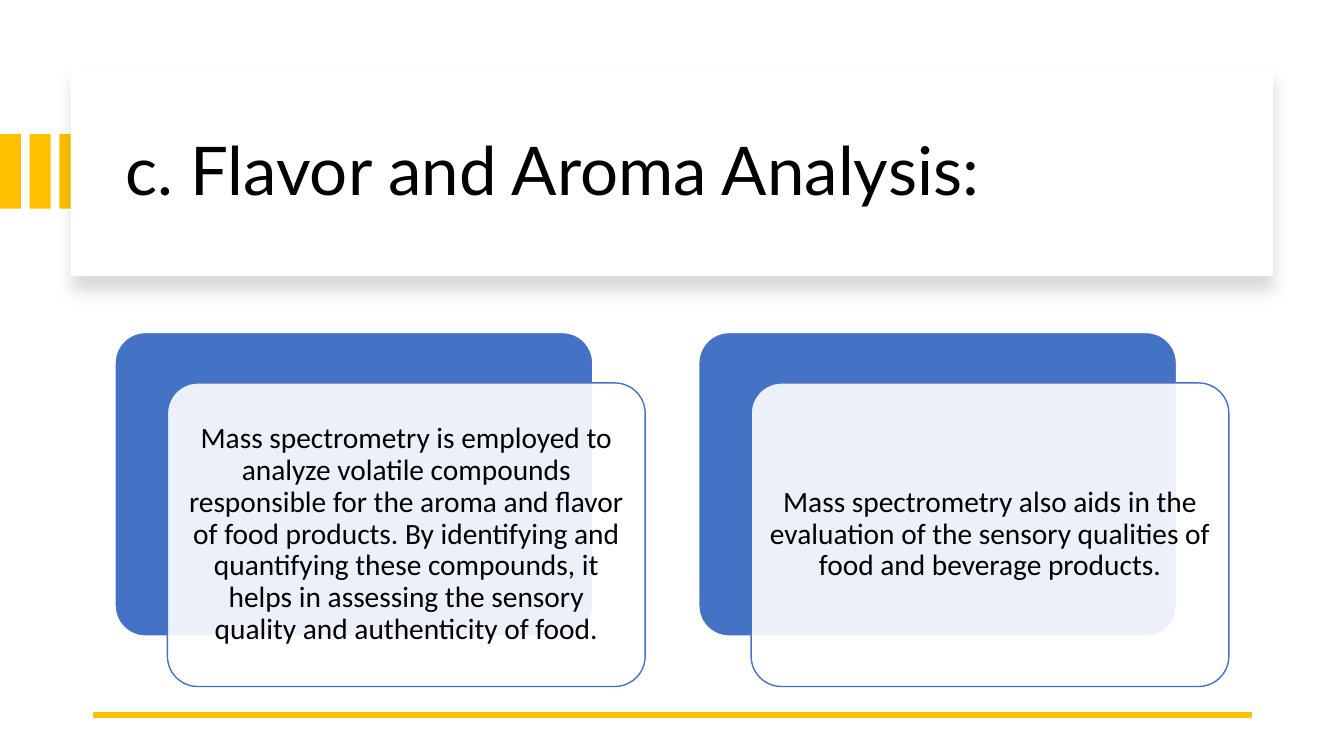
from dataclasses import dataclass

import pptx
import pptx.dml.color
import pptx.enum.shapes
import pptx.enum.text
import pptx.oxml
import pptx.oxml.ns
import pptx.shapes.autoshape
import pptx.util
from pptx.util import Cm

WHITE = pptx.dml.color.RGBColor(0xFF, 0xFF, 0xFF)
BLACK = pptx.dml.color.RGBColor(0x00, 0x00, 0x00)
GOLD = pptx.dml.color.RGBColor(0xFF, 0xC0, 0x00)
BLUE = pptx.dml.color.RGBColor(0x44, 0x72, 0xC4)

RECTANGLE = pptx.enum.shapes.MSO_SHAPE.RECTANGLE
ROUNDED = pptx.enum.shapes.MSO_SHAPE.ROUNDED_RECTANGLE
MIDDLE = pptx.enum.text.MSO_ANCHOR.MIDDLE

STRIPE_COUNT = 3
STRIPE_PITCH = 0.75
CARD_LEFT, CARD_TOP, CARD_PITCH = 2.9, 8.38, 14.71
CARD_WIDTH, CARD_HEIGHT = 12.04, 7.65
FRONT_SHIFT_X, FRONT_SHIFT_Y = 1.32, 1.27
CARD_INSET = 0.23

CARD_TEXTS = (
    "Mass spectrometry is employed to analyze volatile compounds responsible "
    "for the aroma and flavor of food products. By identifying and quantifying "
    "these compounds, it helps in assessing the sensory quality and "
    "authenticity of food.",
    "Mass spectrometry also aids in the evaluation of the sensory qualities "
    "of food and beverage products.",
)


@dataclass(frozen=True)
class Box:
    """A rectangle in centimetres."""

    left: float
    top: float
    width: float
    height: float

    def lengths(self) -> tuple[Cm, Cm, Cm, Cm]:
        return Cm(self.left), Cm(self.top), Cm(self.width), Cm(self.height)


def add_filled(
    shapes,
    preset: pptx.enum.shapes.MSO_SHAPE,
    box: Box,
    fill: pptx.dml.color.RGBColor,
    outline: pptx.dml.color.RGBColor | None = None,
) -> pptx.shapes.autoshape.Shape:
    shape = shapes.add_shape(preset, *box.lengths())
    shape.shadow.inherit = False
    shape.fill.solid()
    shape.fill.fore_color.rgb = fill
    if outline is None:
        shape.line.fill.background()
    else:
        shape.line.color.rgb = outline
        shape.line.width = pptx.util.Pt(1)
    if preset == ROUNDED:
        shape.adjustments[0] = 0.1
    return shape


def add_stripes(slide) -> None:
    stripes = slide.shapes.add_group_shape().shapes
    for index in range(STRIPE_COUNT):
        add_filled(stripes, RECTANGLE, Box(index * STRIPE_PITCH, 3.38, 0.53, 1.88), GOLD)


def add_title_panel(slide) -> None:
    panel = add_filled(slide.shapes, RECTANGLE, Box(1.78, 1.7, 30.3, 5.26), WHITE)
    effects = panel._element.spPr.find(pptx.oxml.ns.qn("a:effectLst"))
    effects.append(pptx.oxml.parse_xml(
        f'<a:outerShdw {pptx.oxml.ns.nsdecls("a")} blurRad="139700" dist="127000" '
        'dir="5400000" algn="t" rotWithShape="0">'
        '<a:srgbClr val="000000"><a:alpha val="15000"/></a:srgbClr></a:outerShdw>'
    ))


def fill_title(slide) -> None:
    """Write the title and bring it in front of its panel."""
    title = slide.shapes.title
    title.left, title.top, title.width, title.height = Box(2.9, 2.21, 28.27, 4.32).lengths()
    frame = title.text_frame
    frame.text = "c. Flavor and Aroma Analysis:"
    frame.auto_size = pptx.enum.text.MSO_AUTO_SIZE.NONE
    frame.vertical_anchor = MIDDLE
    heading = frame.paragraphs[0]
    heading.alignment = pptx.enum.text.PP_ALIGN.LEFT
    heading.line_spacing = 0.9
    heading.font.name = "Lato"
    heading.font.size = pptx.util.Pt(48)
    heading.font.color.rgb = BLACK
    slide.shapes._spTree.append(title._element)


def add_bottom_rule(slide) -> None:
    rule = slide.shapes.add_connector(
        pptx.enum.shapes.MSO_CONNECTOR.STRAIGHT, Cm(31.55), Cm(18.01), Cm(2.34), Cm(18.01)
    )
    rule.line.color.rgb = GOLD
    rule.line.width = pptx.util.Pt(4.5)
    rule._element.spPr.append(
        pptx.oxml.parse_xml(f'<a:effectLst {pptx.oxml.ns.nsdecls("a")}/>')
    )


def add_card(shapes, left: float, text: str) -> None:
    """Draw a blue card with a translucent text card shifted over it."""
    add_filled(shapes, ROUNDED, Box(left, CARD_TOP, CARD_WIDTH, CARD_HEIGHT), BLUE, WHITE)
    front_box = Box(left + FRONT_SHIFT_X, CARD_TOP + FRONT_SHIFT_Y, CARD_WIDTH, CARD_HEIGHT)
    front = add_filled(shapes, ROUNDED, front_box, WHITE, BLUE)
    front_color = front._element.spPr.find(pptx.oxml.ns.qn("a:solidFill"))[0]
    front_color.append(
        pptx.oxml.parse_xml(f'<a:alpha {pptx.oxml.ns.nsdecls("a")} val="90000"/>')
    )

    frame = front.text_frame
    frame.text = text
    frame.word_wrap = True
    frame.vertical_anchor = MIDDLE
    frame.margin_left = frame.margin_right = Cm(CARD_INSET)
    frame.margin_top = frame.margin_bottom = Cm(CARD_INSET)
    statement = frame.paragraphs[0]
    statement.alignment = pptx.enum.text.PP_ALIGN.CENTER
    statement.line_spacing = 0.9
    statement.font.name = "Calibri"
    statement.font.size = pptx.util.Pt(21)
    statement.font.color.rgb = BLACK


def main() -> None:
    presentation = pptx.Presentation()
    presentation.slide_width = Cm(33.87)
    presentation.slide_height = Cm(19.05)
    slide = presentation.slides.add_slide(presentation.slide_layouts.get_by_name("Title Only"))

    add_stripes(slide)
    add_title_panel(slide)
    fill_title(slide)
    add_bottom_rule(slide)
    cards = slide.shapes.add_group_shape().shapes
    for index, text in enumerate(CARD_TEXTS):
        add_card(cards, CARD_LEFT + index * CARD_PITCH, text)

    presentation.save("out.pptx")


if __name__ == "__main__":
    main()
